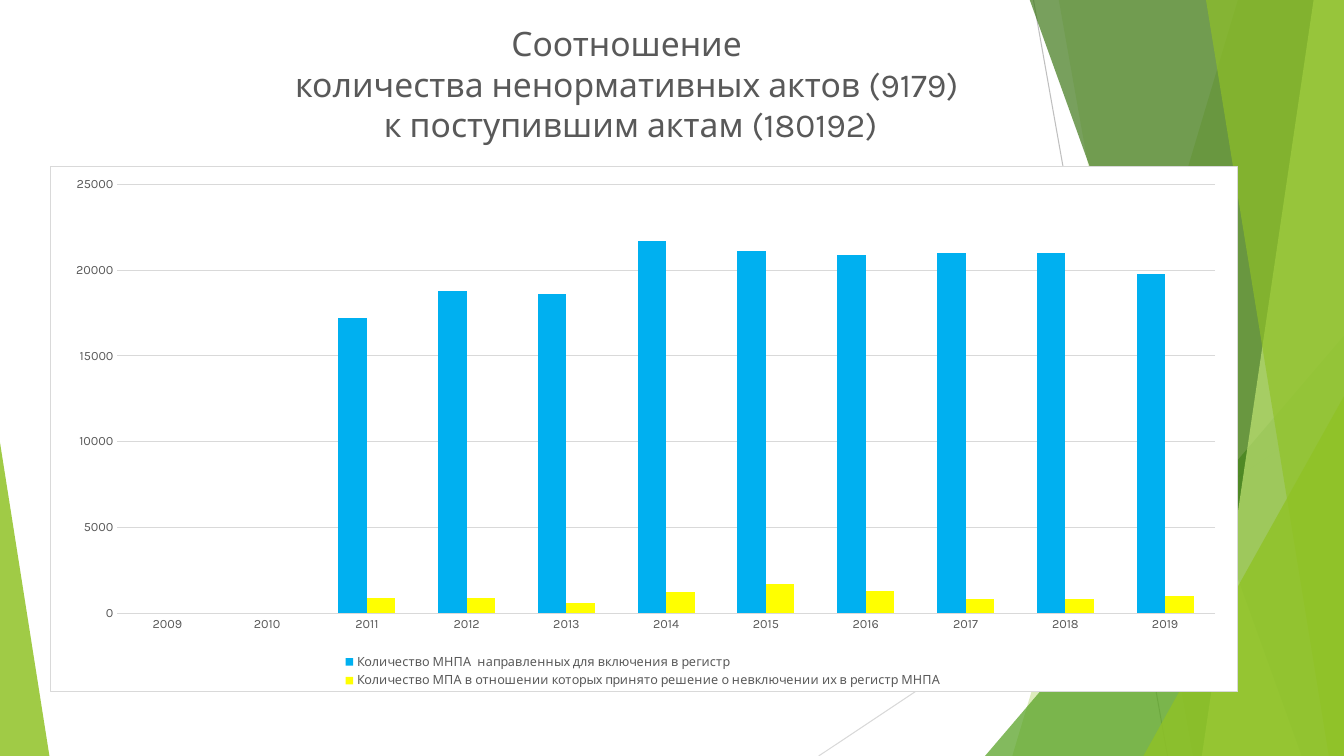
from dataclasses import dataclass

from lxml import etree
from pptx import Presentation
from pptx.chart import data as chart_data
from pptx.dml.color import RGBColor
from pptx.enum import chart as chart_enum, shapes, text
from pptx.oxml import ns, parse_xml
from pptx.util import Inches, Pt


@dataclass(frozen=True)
class Theme:
    """Colours, font and type sizes of the slide."""
    font: str = "Karla"
    ink: str = "595959"
    grid: str = "D9D9D9"
    ray: str = "BFBFBF"
    paper: str = "FFFFFF"
    lime: str = "90C226"
    green: str = "54A021"
    forest: str = "3F7819"
    pale: str = "C0E474"
    sent: str = "00B0F0"
    refused: str = "FFFF00"
    title_size: int = 24
    label_size: int = 9
    hairline: float = 0.75


THEME = Theme()
TOP, RIGHT, BOTTOM = -0.01, 13.33, 7.5
TITLE = "Соотношение \vколичества ненормативных актов (9179) \vк поступившим актам (180192)"
YEARS = [str(year) for year in range(2009, 2020)]
SERIES = [
    ("Количество МНПА  направленных для включения в регистр", THEME.sent,
     [None, None, 17200, 18800, 18600, 21700, 21100, 20900, 21000, 21000, 19800]),
    ("Количество МПА в отношении которых принято решение о невключении их в регистр МНПА ",
     THEME.refused,
     [None, None, 900, 900, 600, 1200, 1700, 1300, 800, 800, 1000]),
]
RAYS = [((10.25, 0), (11.58, 7.5), THEME.ray), ((13.33, 4.03), (8.12, 7.5), THEME.grid)]
BACK_BANDS = [(12.28, 10.04, THEME.lime, 30), (10.5, 11.83, THEME.lime, 20)]
FRONT_BANDS = [(10.21, 12.91, THEME.forest, 70), (13.03, 11.92, THEME.pale, 70),
               (11.96, 13.18, THEME.lime, 65)]
BACK_TRIANGLE = ((9.77, 3.33, 3.56, 4.17), 1, THEME.green, 72)
FRONT_TRIANGLES = [((11.34, 3.93, 1.99, 3.57), 1, THEME.lime, 80),
                   ((0, 4.39, 0.49, 3.11), 0, THEME.lime, 85)]


def apply_format(target, values):
    """Set each attribute in values on target."""
    for name, value in values.items():
        setattr(target, name, value)


def style_font(font, size):
    """Give a font the theme face and ink at the given size."""
    apply_format(font, {"name": THEME.font, "size": Pt(size), "bold": False})
    font.color.rgb = RGBColor.from_string(THEME.ink)


def paint(shape, color, opacity):
    """Fill a shape with a translucent colour and drop its outline and shadow."""
    shape.fill.solid()
    shape.fill.fore_color.rgb = RGBColor.from_string(color)
    fill_color = shape.element.spPr.find(".//" + ns.qn("a:srgbClr"))
    etree.SubElement(fill_color, ns.qn("a:alpha"), val=str(opacity * 1000))
    shape.line.fill.background()
    shape.shadow.inherit = False


def add_ray(slide, start, end, color):
    """Draw a thin straight line."""
    points = [Inches(value) for value in (*start, *end)]
    ray = slide.shapes.add_connector(shapes.MSO_CONNECTOR.STRAIGHT, *points)
    ray.line.color.rgb = RGBColor.from_string(color)
    ray.line.width = Pt(THEME.hairline)
    etree.SubElement(ray.element.spPr, ns.qn("a:effectLst"))


def add_band(slide, top_left, bottom_left, color, opacity):
    """Draw a slanted band that reaches the right edge of the slide."""
    corners = [(top_left, TOP), (RIGHT, TOP), (RIGHT, BOTTOM), (bottom_left, BOTTOM)]
    points = [(Inches(x), Inches(y)) for x, y in corners]
    builder = slide.shapes.build_freeform(*points[0])
    builder.add_line_segments(points[1:], close=True)
    paint(builder.convert_to_shape(), color, opacity)


def add_triangle(slide, box, apex, color, opacity):
    """Draw a triangle with its apex at a fraction of the width."""
    triangle = slide.shapes.add_shape(
        shapes.MSO_SHAPE.ISOSCELES_TRIANGLE, *map(Inches, box))
    triangle.adjustments[0] = apex
    paint(triangle, color, opacity)


def add_decoration(slide):
    """Draw the green facets at the slide edges."""
    for ray in RAYS:
        add_ray(slide, *ray)
    for band in BACK_BANDS:
        add_band(slide, *band)
    add_triangle(slide, *BACK_TRIANGLE)
    for band in FRONT_BANDS:
        add_band(slide, *band)
    for triangle in FRONT_TRIANGLES:
        add_triangle(slide, *triangle)


def set_title(slide):
    """Fill and place the title above the decoration."""
    title = slide.shapes.title
    apply_format(title, {"left": Inches(0.78), "top": Inches(0.15),
                         "width": Inches(10.95), "height": Inches(1.44)})
    frame = title.text_frame
    frame.text = TITLE
    apply_format(frame, {"word_wrap": True, "auto_size": text.MSO_AUTO_SIZE.NONE,
                         "vertical_anchor": text.MSO_ANCHOR.TOP,
                         "margin_top": Inches(0.08)})
    paragraph = frame.paragraphs[0]
    apply_format(paragraph, {"alignment": text.PP_ALIGN.CENTER, "line_spacing": Pt(28.8)})
    for run in paragraph.runs:
        style_font(run.font, THEME.title_size)
    title.element.getparent().append(title.element)


def style_axis(axis):
    """Remove ticks and the axis line and style the labels."""
    apply_format(axis, {"major_tick_mark": chart_enum.XL_TICK_MARK.NONE,
                        "minor_tick_mark": chart_enum.XL_TICK_MARK.NONE})
    axis.format.line.fill.background()
    style_font(axis.tick_labels.font, THEME.label_size)


def frame_chart(chart):
    """Give the chart a white ground, a thin border and a fixed plot area."""
    space = chart.element
    space.find(ns.qn("c:chart")).addnext(parse_xml(
        f'<c:spPr {ns.nsdecls("c", "a")}><a:solidFill><a:srgbClr val="{THEME.paper}"/>'
        f'</a:solidFill><a:ln w="{Pt(THEME.hairline)}"><a:solidFill>'
        f'<a:srgbClr val="{THEME.grid}"/></a:solidFill></a:ln></c:spPr>'))
    plot_area = space.find(".//" + ns.qn("c:plotArea"))
    for layout in plot_area.findall(ns.qn("c:layout")):
        plot_area.remove(layout)
    sizes = {"x": 0.056, "y": 0.034, "w": 0.925, "h": 0.816}
    places = "".join(f'<c:{name} val="{value}"/>' for name, value in sizes.items())
    plot_area.insert(0, parse_xml(
        f'<c:layout {ns.nsdecls("c")}><c:manualLayout><c:layoutTarget val="inner"/>'
        f'<c:xMode val="edge"/><c:yMode val="edge"/>{places}</c:manualLayout></c:layout>'))


def add_acts_chart(slide):
    """Add the clustered columns of acts by year."""
    data = chart_data.CategoryChartData()
    data.categories = YEARS
    for name, _, values in SERIES:
        data.add_series(name, values)
    chart = slide.shapes.add_chart(
        chart_enum.XL_CHART_TYPE.COLUMN_CLUSTERED,
        *map(Inches, (0.5, 1.65, 11.78, 5.22)), data).chart
    style_font(chart.font, THEME.label_size)
    apply_format(chart, {"has_title": False, "has_legend": True})
    apply_format(chart.legend, {"position": chart_enum.XL_LEGEND_POSITION.BOTTOM,
                                "include_in_layout": False})
    style_font(chart.legend.font, THEME.label_size)
    plot = chart.plots[0]
    apply_format(plot, {"gap_width": 150, "overlap": 0, "vary_by_categories": False})
    for series, (_, color, _) in zip(plot.series, SERIES):
        series.format.fill.solid()
        series.format.fill.fore_color.rgb = RGBColor.from_string(color)
    for axis in (chart.category_axis, chart.value_axis):
        style_axis(axis)
    apply_format(chart.value_axis, {"minimum_scale": 0, "maximum_scale": 25000,
                                    "major_unit": 5000, "has_major_gridlines": True})
    grid_line = chart.value_axis.major_gridlines.format.line
    grid_line.color.rgb = RGBColor.from_string(THEME.grid)
    grid_line.width = Pt(THEME.hairline)
    frame_chart(chart)


def main():
    """Build the slide and save it."""
    presentation = Presentation()
    apply_format(presentation, {"slide_width": Inches(RIGHT), "slide_height": Inches(BOTTOM)})
    slide = presentation.slides.add_slide(presentation.slide_layouts[5])
    add_decoration(slide)
    set_title(slide)
    add_acts_chart(slide)
    presentation.save("out.pptx")


if __name__ == "__main__":
    main()
